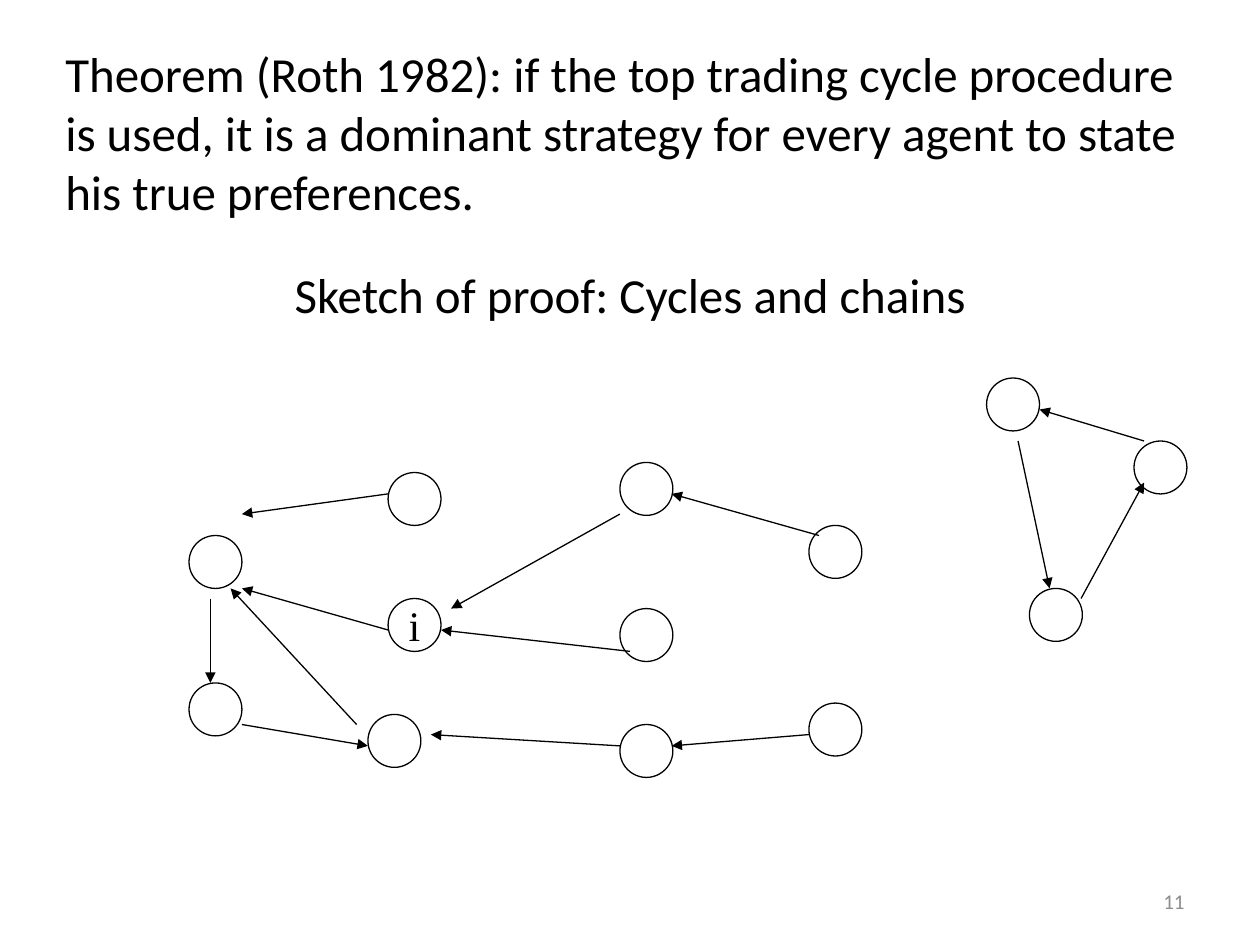
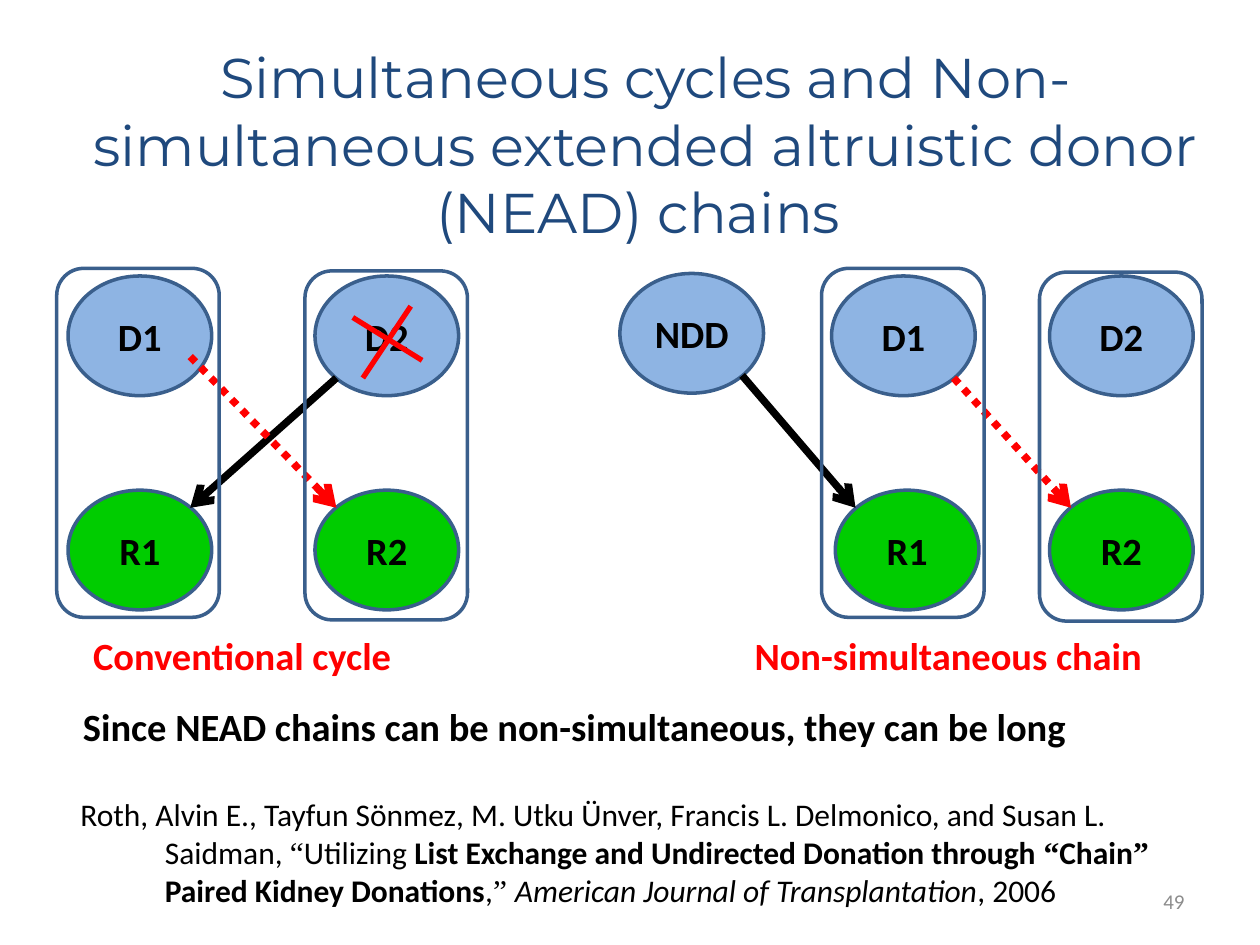
from lxml.etree import SubElement
from pptx import Presentation
from pptx.dml.color import RGBColor
from pptx.enum.dml import MSO_LINE
from pptx.enum.shapes import MSO_CONNECTOR, MSO_SHAPE
from pptx.enum.text import MSO_ANCHOR, PP_ALIGN
from pptx.oxml.ns import qn
from pptx.util import Emu, Pt

PX = 9144  # one px is a hundredth of an inch
COLORS = {
    "black": "000000", "white": "FFFFFF", "grey": "8C8C8C", "navy": "1F497D",
    "edge": "3A5F8C", "donor": "8EB4E3", "recipient": "00CC00", "red": "FF0000",
}
BODY, HEAD, SERIF = "Calibri", "Montserrat", "Times New Roman"


def px(*lengths):
    return [Emu(n * PX) for n in lengths]


def rgb(name):
    return RGBColor.from_string(COLORS[name])


class Deck:
    def __init__(self):
        self.prs = Presentation()
        self.prs.slide_width, self.prs.slide_height = px(1000, 750)
        self.s = None

    def slide(self, number):
        self.s = self.prs.slides.add_slide(self.prs.slide_layouts[6])
        self.text((717, 695, 233, 40), str(number), 12, "grey",
                  align=PP_ALIGN.RIGHT, anchor=MSO_ANCHOR.MIDDLE)

    def label(self, sp, runs, size, color="black", font=BODY, bold=False,
              align=PP_ALIGN.LEFT, anchor=MSO_ANCHOR.TOP, wrap=True, hanging=0):
        """Fill a shape with one paragraph; runs are a string or (text, font changes) pairs."""
        tf = sp.text_frame
        tf.word_wrap, tf.vertical_anchor = wrap, anchor
        p = tf.paragraphs[0]
        p.alignment = align
        p.font.name, p.font.size, p.font.bold = font, Pt(size), bold
        p.font.color.rgb = rgb(color)
        if hanging:
            pPr = p._p.get_or_add_pPr()
            pPr.set("marL", str(hanging * PX))
            pPr.set("indent", str(-hanging * PX))
        for words, changes in [(runs, {})] if isinstance(runs, str) else runs:
            r = p.add_run()
            r.text = words
            r.font.name = changes.get("name")
            r.font.bold = changes.get("bold")
            r.font.italic = changes.get("italic")

    def text(self, box, runs, size, color="black", **style):
        self.label(self.s.shapes.add_textbox(*px(*box)), runs, size, color, **style)

    def shape(self, kind, box, fill=None, line="black", width=2):
        sp = self.s.shapes.add_shape(kind, *px(*box))
        sp.shadow.inherit = False
        if fill:
            sp.fill.solid()
            sp.fill.fore_color.rgb = rgb(fill)
        else:
            sp.fill.background()
        sp.line.color.rgb = rgb(line)
        sp.line.width = Pt(width)
        return sp

    def line(self, ends, color="black", width=0.75, head=None, dash=None):
        cx = self.s.shapes.add_connector(MSO_CONNECTOR.STRAIGHT, *px(*ends))
        cx.line.color.rgb = rgb(color)
        cx.line.width = Pt(width)
        if dash:
            cx.line.dash_style = dash
        spPr = cx._element.spPr
        if head:
            SubElement(spPr.get_or_add_ln(), qn("a:tailEnd"), type=head)
        SubElement(spPr, qn("a:effectLst"))

    def agent(self, x, y, name=""):
        sp = self.shape(MSO_SHAPE.OVAL, (x, y, 42, 42), "white", width=0.75)
        if name:
            self.label(sp, name, 24, font=SERIF, align=PP_ALIGN.CENTER,
                       anchor=MSO_ANCHOR.MIDDLE, wrap=False)

    def patient(self, x, y, name, fill):
        sp = self.shape(MSO_SHAPE.OVAL, (x, y, 114, 95), fill, "edge")
        tf = sp.text_frame
        tf.margin_left = tf.margin_right = 0
        self.label(sp, name, 22, bold=True, align=PP_ALIGN.CENTER,
                   anchor=MSO_ANCHOR.MIDDLE)


def theorem_slide(deck):
    deck.slide(11)
    deck.text((50, 183, 900, 100), "Sketch of proof: Cycles and chains", 28,
              align=PP_ALIGN.CENTER, anchor=MSO_ANCHOR.MIDDLE)
    deck.text((42, 42, 917, 125),
              "Theorem (Roth 1982): if the top trading cycle procedure is used, "
              "it is a dominant strategy for every agent to state his true preferences.",
              28, anchor=MSO_ANCHOR.MIDDLE)

    # Agents: cycle on the left, chains leading to it, separate cycle on the right
    cycle = [(292, 567), (150, 425), (150, 542)]
    chains = [(308, 375), (492, 367), (492, 483), (492, 575), (642, 417), (642, 558)]
    far_cycle = [(783, 300), (817, 467), (900, 350)]
    for x, y in cycle + chains + far_cycle:
        deck.agent(x, y)
    deck.agent(308, 475, "i")

    # Each arrow points to the agent's preferred choice
    cycle_arrows = [(167, 475, 167, 542), (192, 575, 292, 592), (283, 575, 183, 467)]
    far_arrows = [(808, 350, 833, 467), (858, 475, 908, 383), (908, 350, 825, 325)]
    chain_arrows = [
        (308, 500, 192, 467), (492, 408, 358, 483), (650, 425, 533, 392),
        (500, 517, 350, 500), (492, 592, 342, 583), (642, 583, 533, 592),
        (308, 392, 192, 408),
    ]
    for ends in cycle_arrows + far_arrows + chain_arrows:
        deck.line(ends, head="triangle")


def chains_slide(deck):
    deck.slide(49)
    deck.text((50, 25, 925, 178),
              "Simultaneous cycles and Non-simultaneous extended altruistic donor "
              "(NEAD) chains ", 32, "navy", font=HEAD,
              align=PP_ALIGN.CENTER, anchor=MSO_ANCHOR.MIDDLE)

    # Donors above, recipients below
    for x, name in [(54, "D1"), (250, "D2"), (660, "D1"), (833, "D2")]:
        deck.patient(x, 219, name, "donor")
    deck.patient(492, 217, "NDD", "donor")
    for x, name in [(54, "R1"), (250, "R2"), (663, "R1"), (833, "R2")]:
        deck.patient(x, 389, name, "recipient")

    # Donations: solid now, dotted later
    for ends in [(267, 300, 151, 403), (589, 298, 679, 403)]:
        deck.line(ends, width=4.25, head="arrow")
    for ends in [(151, 283, 267, 403), (757, 300, 850, 403)]:
        deck.line(ends, "red", 4.25, "arrow", MSO_LINE.ROUND_DOT)

    # Cross over the donor who withdraws
    for ends in [(280, 252, 335, 286), (326, 243, 288, 300)]:
        deck.line(ends, "red", 3)

    # Frames around donor and recipient pairs
    for x, y in [(45, 213), (242, 215), (652, 213), (825, 216)]:
        deck.shape(MSO_SHAPE.ROUNDED_RECTANGLE, (x, y, 129, 277), line="edge")

    # Captions and conclusion
    for x, caption in [(64, "Conventional cycle"), (589, "Non-simultaneous chain")]:
        deck.text((x, 497, 411, 47), caption, 22, "red", bold=True)
    deck.text((56, 553, 882, 50),
              "Since NEAD chains can be non-simultaneous, they can be long", 22,
              bold=True, hanging=67)

    # Reference
    quote, bold = {"name": SERIF}, {"bold": True}
    deck.text((54, 626, 930, 101), [
        ("Roth, Alvin E., Tayfun Sönmez, M. Utku Ünver, Francis L. Delmonico, "
         "and Susan L. Saidman, ", {}),
        ("“", quote), ("Utilizing ", {}),
        ("List Exchange and Undirected Donation through ", bold),
        ("“", quote | bold), ("Chain", bold), ("”", quote | bold),
        (" Paired Kidney Donations", bold), (",", {}), ("” ", quote),
        ("American Journal of Transplantation", {"italic": True}), (", 2006", {}),
    ], 18, hanging=67)


def main():
    deck = Deck()
    theorem_slide(deck)
    chains_slide(deck)
    deck.prs.save("out.pptx")


if __name__ == "__main__":
    main()
